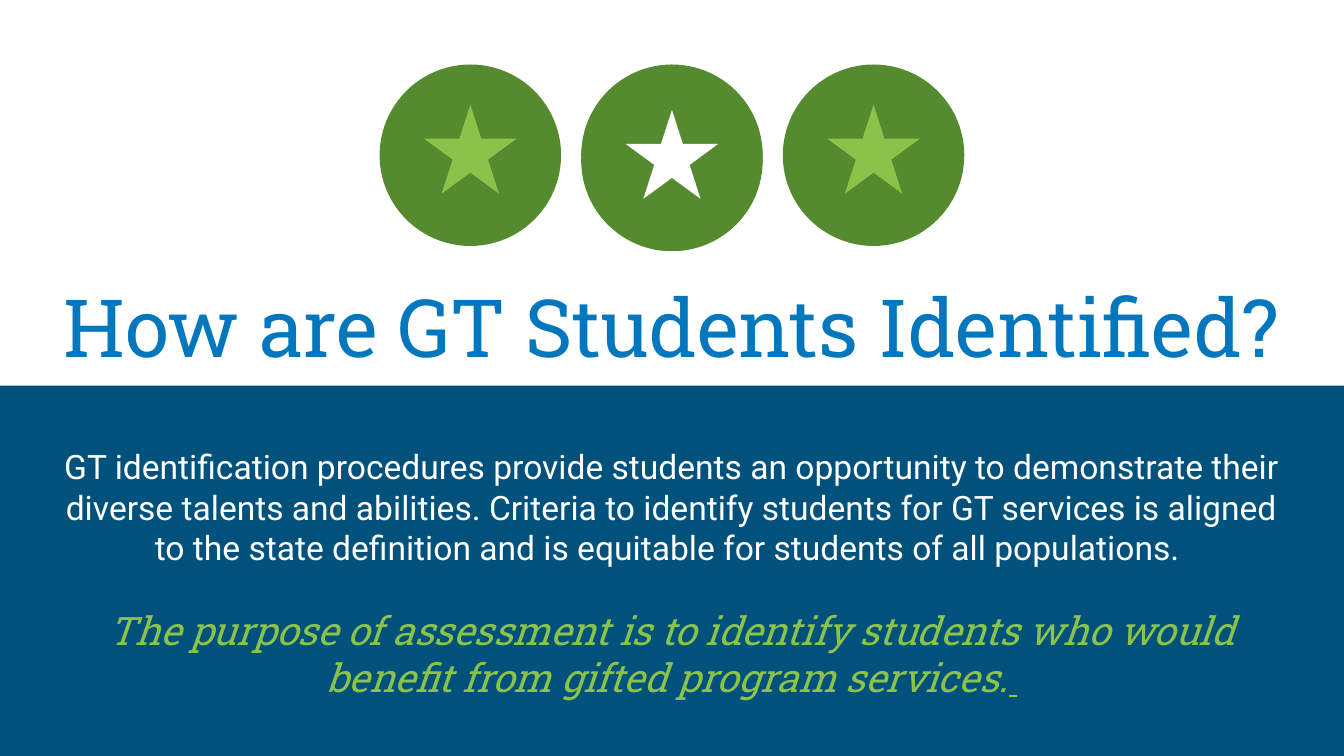
from pptx import Presentation
from pptx.dml.color import RGBColor
from pptx.enum import shapes, text
from pptx.util import Cm, Pt

NAVY = RGBColor(0x00, 0x51, 0x7C)
BLUE = RGBColor(0x02, 0x77, 0xBD)
GREEN = RGBColor(0x55, 0x8B, 0x2F)
LIME = RGBColor(0x8B, 0xC3, 0x4A)
WHITE = RGBColor(0xFF, 0xFF, 0xFF)

SLAB, SANS = "Roboto Slab", "Roboto"

# Paragraphs: (space before in points, runs); run: (text, font, size, colour, extra styles)
TITLE = [(0, [("How are GT Students Identified?", SLAB, 43, BLUE, {})])]
BODY = [
    (0, [("GT identification procedures provide students an opportunity to "
          "demonstrate their diverse talents and abilities. Criteria to identify "
          "students for GT services is aligned to the state definition and is "
          "equitable for students of all populations. ", SANS, 18, WHITE, {})]),
    (21, [("The purpose of assessment is to identify students who would benefit "
           "from gifted program services.", SLAB, 21, LIME, {"italic": True}),
          (" ", SANS, 18, LIME, {"underline": True})]),
]

# Badges: (column, top in cm, star colour); the white star lies over the middle one
BADGES = [(0, 1.22, LIME), (1, 1.22, LIME), (2, 1.22, LIME), (1, 1.32, WHITE)]

SLIDE_W, SLIDE_H = 25.4, 14.29
BADGE_SIZE, BADGE_PITCH = 3.43, 3.81
STAR_W, STAR_H, STAR_DROP = 1.75, 1.68, 0.76
PANEL_W, PANEL_H = 25.45, 7.29
TEXT_LEFT, TEXT_W = 0.86, 23.67


def add_filled(parent, preset, left, top, width, height, colour):
    shape = parent.add_shape(preset, Cm(left), Cm(top), Cm(width), Cm(height))
    shape.shadow.inherit = False
    shape.fill.solid()
    shape.fill.fore_color.rgb = colour
    shape.line.fill.background()


def add_badge(slide, column, top, star_colour):
    """Group a green disc with a star centred across it."""
    first_left = (SLIDE_W - BADGE_SIZE) / 2 - BADGE_PITCH
    left = first_left + column * BADGE_PITCH
    badge = slide.shapes.add_group_shape().shapes
    add_filled(badge, shapes.MSO_SHAPE.OVAL, left, top, BADGE_SIZE, BADGE_SIZE, GREEN)
    add_filled(badge, shapes.MSO_SHAPE.STAR_5_POINT, left + (BADGE_SIZE - STAR_W) / 2,
               top + STAR_DROP, STAR_W, STAR_H, star_colour)


def add_centred_text(slide, top, height, anchor, paragraphs):
    frame = slide.shapes.add_textbox(
        Cm(TEXT_LEFT), Cm(top), Cm(TEXT_W), Cm(height)).text_frame
    frame.word_wrap = True
    frame.vertical_anchor = anchor
    frame.margin_left = frame.margin_right = Cm(0.25)
    frame.margin_top = frame.margin_bottom = Cm(0.25)
    for index, (space_before, runs) in enumerate(paragraphs):
        paragraph = frame.add_paragraph() if index else frame.paragraphs[0]
        paragraph.alignment = text.PP_ALIGN.CENTER
        paragraph.space_before = Pt(space_before)
        for words, font_name, size, colour, styles in runs:
            run = paragraph.add_run()
            run.text = words
            run.font.name = font_name
            run.font.size = Pt(size)
            run.font.color.rgb = colour
            for style, value in styles.items():
                setattr(run.font, style, value)


def main():
    deck = Presentation()
    deck.slide_width, deck.slide_height = Cm(SLIDE_W), Cm(SLIDE_H)
    slide = deck.slides.add_slide(deck.slide_layouts[6])
    slide.background.fill.solid()
    slide.background.fill.fore_color.rgb = NAVY

    add_filled(slide.shapes, shapes.MSO_SHAPE.RECTANGLE, 0, 0, PANEL_W, PANEL_H, WHITE)
    add_centred_text(slide, 0.15, 7.16, text.MSO_ANCHOR.BOTTOM, TITLE)
    for column, top, star_colour in BADGES:
        add_badge(slide, column, top, star_colour)
    add_centred_text(slide, 7.59, 6.5, text.MSO_ANCHOR.MIDDLE, BODY)
    deck.save("out.pptx")


if __name__ == "__main__":
    main()
